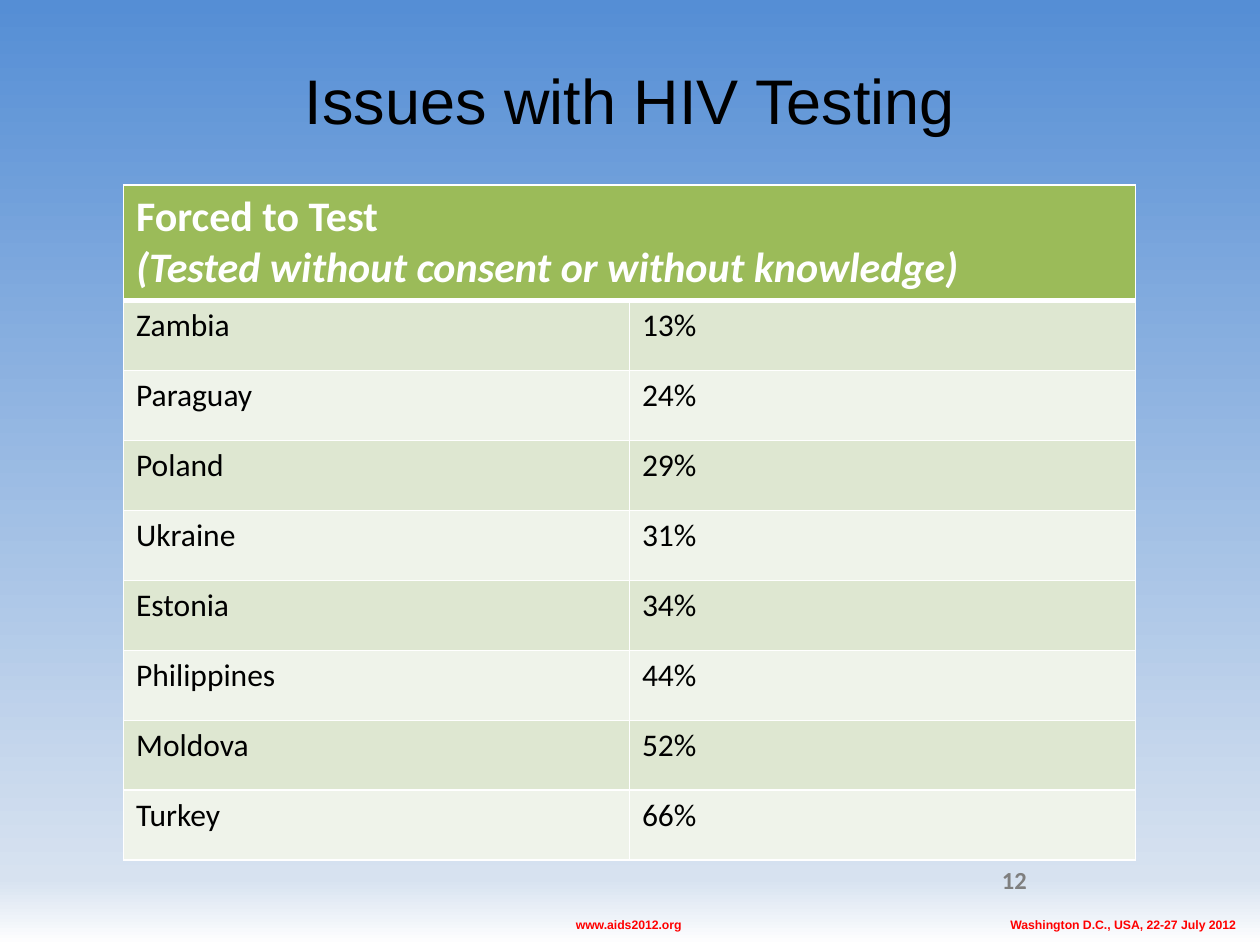
import copy

import pptx
import pptx.dml.color
import pptx.enum.text
import pptx.oxml
import pptx.oxml.ns
import pptx.util

Cm, Pt = pptx.util.Cm, pptx.util.Pt
ALIGN = pptx.enum.text.PP_ALIGN
COLORS = {
    "sky": "558ED5", "haze": "D7E2F0", "white": "FFFFFF", "black": "000000",
    "red": "FF0000", "gray": "7F7F7F", "header": "9BBB59",
    "band_dark": "DEE7D1", "band_light": "EFF3EA",
}
HEADER = "Forced to Test\n(Tested without consent or without knowledge)"
RATES = [
    ("Zambia", "13%"), ("Paraguay", "24%"), ("Poland", "29%"),
    ("Ukraine", "31%"), ("Estonia", "34%"), ("Philippines", "44%"),
    ("Moldova", "52%"), ("Turkey", "66%"),
]


def rgb(name):
    return pptx.dml.color.RGBColor.from_string(COLORS[name])


class Deck:
    def __init__(self):
        self.prs = pptx.Presentation()
        self.prs.slide_width, self.prs.slide_height = Cm(25.4), Cm(19.05)
        self.s = self.prs.slides.add_slide(self.prs.slide_layouts[5])

    def style(self, tf, size, color, font="Calibri", bold=False, align=ALIGN.LEFT):
        for p in tf.paragraphs:
            p.alignment = align
            for r in p.runs:
                r.font.name, r.font.size, r.font.bold = font, Pt(size), bold
                r.font.color.rgb = rgb(color)

    def background(self, stops):
        """Fill the slide from top to bottom with (percent, color) stops."""
        fill = self.s.background.fill
        fill.gradient()
        fill.gradient_angle = 270
        gs_list = self.s.element.xpath(".//a:gsLst")[0]
        for _ in range(len(stops) - len(gs_list)):
            gs_list.append(copy.deepcopy(gs_list[-1]))
        for stop, (percent, color) in zip(fill.gradient_stops, stops):
            stop.position = percent / 100
            stop.color.rgb = rgb(color)

    def title(self, text, x, y, w, h):
        sp = self.s.shapes.title
        sp.left, sp.top, sp.width, sp.height = Cm(x), Cm(y), Cm(w), Cm(h)
        tf = sp.text_frame
        tf.text = text
        tf.vertical_anchor = pptx.enum.text.MSO_ANCHOR.MIDDLE
        self.style(tf, 36, "black", "Arial", align=ALIGN.CENTER)

    def text(self, text, x, y, w, h, size, color, font, align, wrap=False):
        tf = self.s.shapes.add_textbox(Cm(x), Cm(y), Cm(w), Cm(h)).text_frame
        tf.word_wrap = wrap
        tf.text = text
        self.style(tf, size, color, font, True, align)

    def cell(self, cell, fill, top=1, bottom=1):
        """Give a cell white borders, with widths in points, and a fill."""
        tc_pr = cell._tc.get_or_add_tcPr()
        for side, width in (("L", 1), ("R", 1), ("T", top), ("B", bottom)):
            tc_pr.append(pptx.oxml.parse_xml(
                f'<a:ln{side} {pptx.oxml.ns.nsdecls("a")} w="{Pt(width)}">'
                f'<a:solidFill><a:srgbClr val="{COLORS["white"]}"/></a:solidFill>'
                f'</a:ln{side}>'))
        cell.fill.solid()
        cell.fill.fore_color.rgb = rgb(fill)

    def table(self, header, rows, x, y, w, header_h, row_h):
        height = header_h + row_h * len(rows)
        table = self.s.shapes.add_table(
            len(rows) + 1, 2, Cm(x), Cm(y), Cm(w), Cm(height)).table
        table.rows[0].height = Cm(header_h)
        for cell in table.rows[0].cells:
            self.cell(cell, "header", bottom=3)
        head = table.cell(0, 0)
        head.merge(table.cell(0, 1))
        head.text_frame.text = header
        self.style(head.text_frame, 24, "white", bold=True)
        head.text_frame.paragraphs[1].runs[0].font.italic = True
        for i, values in enumerate(rows, 1):
            table.rows[i].height = Cm(row_h)
            for cell, value in zip(table.rows[i].cells, values):
                cell.text_frame.text = value
                self.style(cell.text_frame, 18, "black")
                self.cell(cell, "band_dark" if i % 2 else "band_light",
                          top=3 if i == 1 else 1)


def main():
    deck = Deck()
    deck.background([(0, "sky"), (93, "haze"), (100, "white")])
    deck.text("Washington D.C., USA, 22-27 July 2012", 20.12, 18.36, 5.16, 0.56,
              7, "red", "Arial", ALIGN.LEFT)
    deck.text("www.aids2012.org", 11.33, 18.36, 2.69, 0.56,
              7, "red", "Arial", ALIGN.CENTER)
    deck.text("12", 19.71, 17.32, 1.24, 0.99,
              14, "gray", "Calibri", ALIGN.RIGHT, wrap=True)
    deck.title("Issues with HIV Testing", 1.37, 0.84, 22.66, 2.34)
    deck.table(HEADER, RATES, 2.49, 3.73, 20.4, 2.33, 1.41)
    deck.prs.save("out.pptx")


if __name__ == "__main__":
    main()
